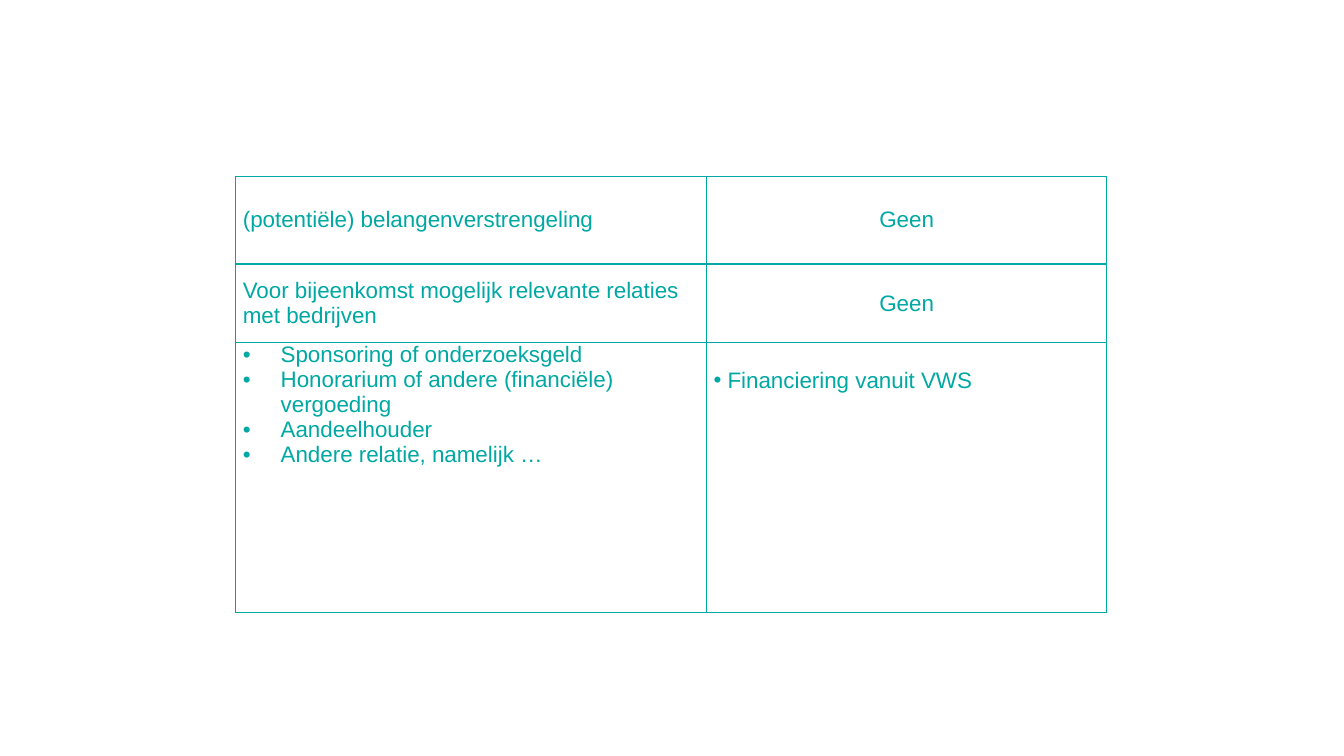
from lxml import etree
from pptx import Presentation
from pptx.dml.color import RGBColor
from pptx.enum.text import MSO_ANCHOR, PP_ALIGN
from pptx.oxml.ns import qn
from pptx.util import Pt

LEFT, CENTER = PP_ALIGN.LEFT, PP_ALIGN.CENTER
TOP, MIDDLE = MSO_ANCHOR.TOP, MSO_ANCHOR.MIDDLE

COLORS = {"teal": "00A8A3", "white": "FFFFFF"}
FONT = "Arial"
COL_WIDTHS = [336.24, 285.84]
ROW_HEIGHTS = [62.64, 56.16, 192.96]

DISCLOSURES = [
    ("(potentiële) belangenverstrengeling", "Geen"),
    ("Voor bijeenkomst mogelijk relevante relaties met bedrijven", "Geen"),
]
RELATIONS = [
    "Sponsoring of onderzoeksgeld",
    "Honorarium of andere (financiële) vergoeding",
    "Aandeelhouder",
    "Andere relatie, namelijk …",
]
FUNDING = ["Financiering vanuit VWS"]


def set_borders(cell, color, width=1):
    tcPr = cell._tc.get_or_add_tcPr()
    for side in ("a:lnL", "a:lnR", "a:lnT", "a:lnB"):
        ln = etree.SubElement(tcPr, qn(side), w=str(Pt(width)))
        fill = etree.SubElement(ln, qn("a:solidFill"))
        etree.SubElement(fill, qn("a:srgbClr"), val=color)


def set_bullet(p, indent):
    pPr = p._p.get_or_add_pPr()
    pPr.set("marL", str(Pt(indent)))
    pPr.set("indent", str(-Pt(indent)))
    etree.SubElement(pPr, qn("a:buFont"), typeface=FONT)
    etree.SubElement(pPr, qn("a:buChar"), char="•")


def fill_cell(cell, lines, align=LEFT, anchor=MIDDLE, indent=0, top=0):
    set_borders(cell, COLORS["teal"])
    cell.fill.solid()
    cell.fill.fore_color.rgb = RGBColor.from_string(COLORS["white"])
    cell.margin_left = cell.margin_right = Pt(5)
    cell.margin_top, cell.margin_bottom = Pt(top), Pt(0)
    cell.vertical_anchor = anchor
    tf = cell.text_frame
    for i, line in enumerate(lines):
        p = tf.add_paragraph() if i else tf.paragraphs[0]
        p.alignment = align
        if indent:
            set_bullet(p, indent)
        r = p.add_run()
        r.text = line
        r.font.name = FONT
        r.font.size = Pt(16)
        r.font.color.rgb = RGBColor.from_string(COLORS["teal"])


def add_disclosure_table(slide, left, top):
    frame = slide.shapes.add_table(
        len(ROW_HEIGHTS), len(COL_WIDTHS), Pt(left), Pt(top),
        Pt(sum(COL_WIDTHS)), Pt(sum(ROW_HEIGHTS)))
    table = frame.table
    table.first_row = table.horz_banding = False
    for col, width in zip(table.columns, COL_WIDTHS):
        col.width = Pt(width)
    for row, height in zip(table.rows, ROW_HEIGHTS):
        row.height = Pt(height)
    for i, (topic, answer) in enumerate(DISCLOSURES):
        fill_cell(table.cell(i, 0), [topic])
        fill_cell(table.cell(i, 1), [answer], align=CENTER)
    last = len(DISCLOSURES)
    fill_cell(table.cell(last, 0), RELATIONS, anchor=TOP, indent=27)
    fill_cell(table.cell(last, 1), FUNDING, anchor=TOP, indent=10, top=18)


def main():
    prs = Presentation()
    prs.slide_width, prs.slide_height = Pt(960), Pt(540)
    slide = prs.slides.add_slide(prs.slide_layouts[6])
    add_disclosure_table(slide, 168.5, 126)
    prs.save("out.pptx")


if __name__ == "__main__":
    main()
